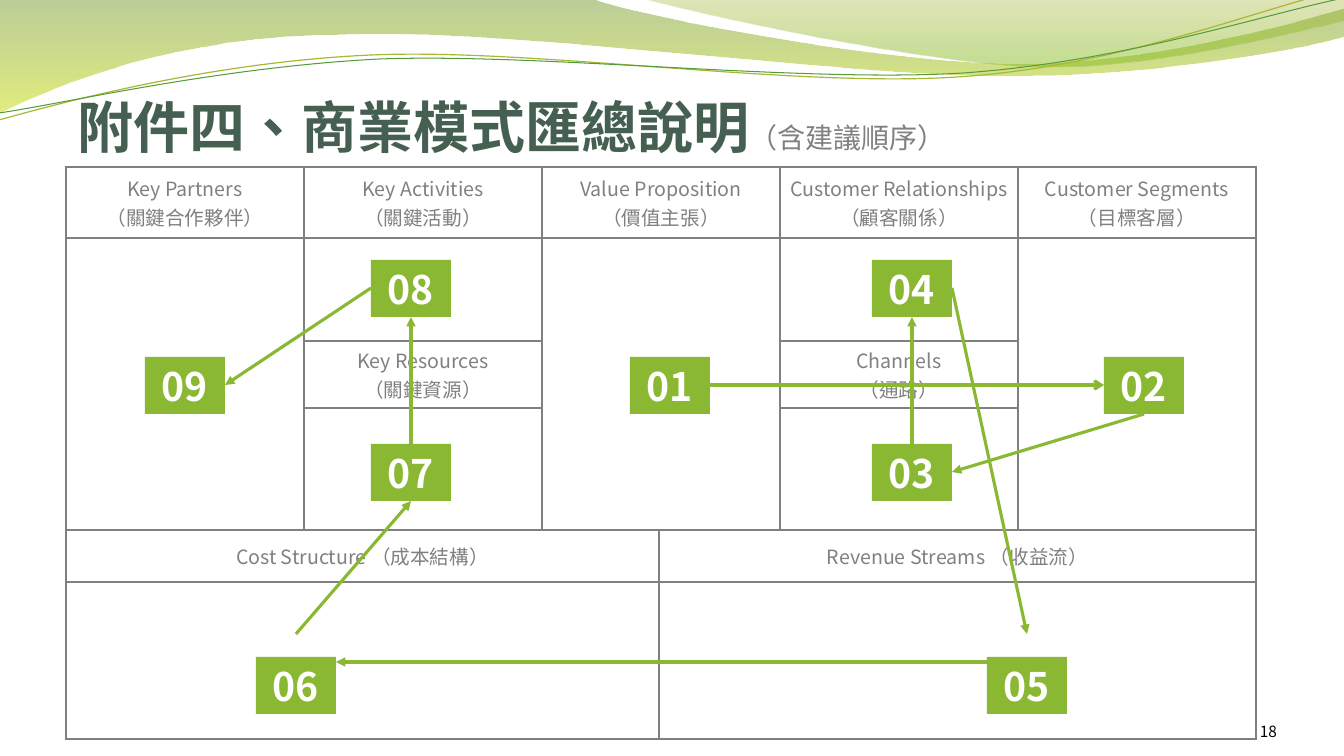
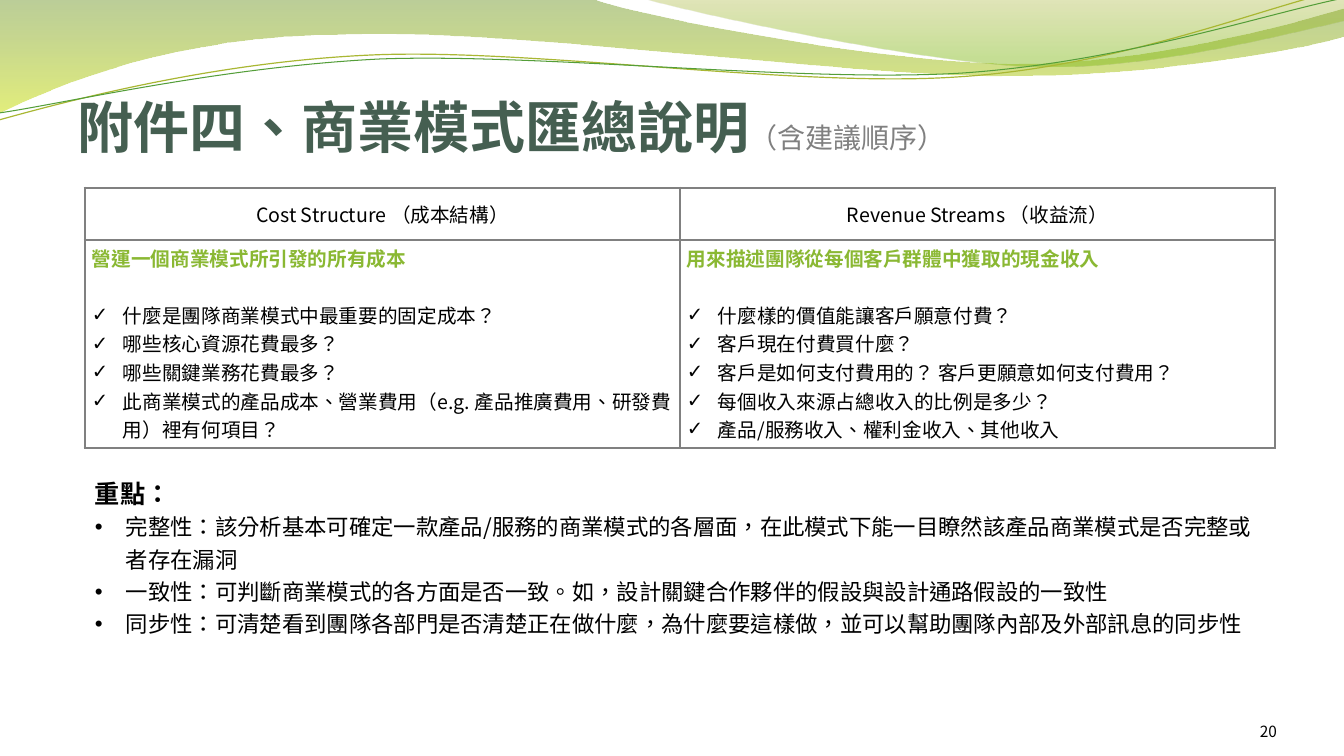
from dataclasses import dataclass, field

from pptx import Presentation
from pptx.dml.color import RGBColor
from pptx.enum.shapes import MSO_CONNECTOR, MSO_SHAPE
from pptx.enum.text import MSO_ANCHOR, MSO_AUTO_SIZE, PP_ALIGN
from pptx.oxml.ns import qn
from pptx.oxml.xmlchemy import OxmlElement
from pptx.util import Emu, Pt

LEFT, CENTER, RIGHT = PP_ALIGN.LEFT, PP_ALIGN.CENTER, PP_ALIGN.RIGHT
TOP, MIDDLE, BOTTOM = MSO_ANCHOR.TOP, MSO_ANCHOR.MIDDLE, MSO_ANCHOR.BOTTOM
RECTANGLE, STRAIGHT = MSO_SHAPE.RECTANGLE, MSO_CONNECTOR.STRAIGHT
NO_FIT = MSO_AUTO_SIZE.NONE

PAGE_W, PAGE_H = 1344, 756
SCALE = 12192000 / PAGE_W

WHITE = RGBColor(0xFF, 0xFF, 0xFF)
BLACK = RGBColor(0x00, 0x00, 0x00)
GRAY = RGBColor(0x80, 0x80, 0x80)
DARK_GREEN = RGBColor(0x45, 0x5F, 0x51)
GREEN = RGBColor(0x8A, 0xB8, 0x33)
OLIVE_LINE = RGBColor(0xA9, 0xB7, 0x33)
GREEN_LINE = RGBColor(0x54, 0x9E, 0x39)

SC, TC = "Noto Sans CJK SC", "Noto Sans CJK TC"

# Text styles: size, colour, bold, font
TITLE = (40, DARK_GREEN, True, SC)
SUBTITLE = (20, GRAY, False, SC)
CANVAS_HEAD = (14, GRAY, False, TC)
BADGE = (28, WHITE, True, SC)
CELL = (14, BLACK, False, TC)
CELL_LEAD = (14, GREEN, True, TC)
POINT_HEAD = (18, BLACK, True, TC)
POINT = (16, BLACK, False, TC)
NUMBER = (11, BLACK, False, TC)

NO_STYLE_TABLE = "{2D5ABB26-0587-4C30-8999-92F81FD0307C}"
OUTER, INNER = Pt(2.25), Pt(1)
HANG = 31

# Wave outlines: two numbers are a line's end, six are a curve's controls and end
WAVES = [
    ([(0, 0), (592, -1), (639, 17, 891, 64, 1019, 64), (1146, 64, 1287, 26, 1344, 9),
      (1345, 37), (1321, 45, 1168, 77, 1002, 76), (836, 76, 513, 29, 346, 35),
      (173, 36, 61, 84, -2, 114)],
     [(0, RGBColor(0x69, 0x92, 0x1C), 45), (1, RGBColor(0xCC, 0xE1, 0x0F), 55)], None),
    ([(643, -1), (684, 11, 916, 62, 1033, 66), (1149, 70, 1292, 32, 1344, 21), (1344, 0)],
     [(0, RGBColor(0x9B, 0xAA, 0x1A), 30), (0.8, RGBColor(0x81, 0xBA, 0x16), 45)], None),
    ([(-1, 120), (64, 102, 212, 62, 372, 55), (531, 48, 795, 88, 957, 77),
      (1119, 67, 1261, 8, 1341, -10)], None, (OLIVE_LINE, 0.85)),
    ([(-1, 113), (62, 104, 220, 67, 380, 59), (541, 53, 802, 83, 963, 73),
      (1123, 62, 1265, 14, 1344, -2)], None, (GREEN_LINE, 0.75)),
]


@dataclass
class Para:
    spans: list
    formats: dict = field(default_factory=dict)
    bullet: str = ""


def px(length):
    return Emu(round(length * SCALE))


def place(box):
    return [px(length) for length in box]


def set_formats(target, formats):
    for name, value in formats.items():
        setattr(target, name, value)


def add_xml(parent, tag, **attributes):
    child = OxmlElement(tag)
    for name, value in attributes.items():
        child.set(name, str(value))
    parent.append(child)
    return child


def margins(left, top, right, bottom):
    return {"margin_left": px(left), "margin_top": px(top),
            "margin_right": px(right), "margin_bottom": px(bottom)}


def write_text(frame, paras):
    for index, item in enumerate(paras):
        para = frame.add_paragraph() if index else frame.paragraphs[0]
        set_formats(para, item.formats)
        if item.bullet:
            props = para._p.get_or_add_pPr()
            props.set("marL", str(px(HANG)))
            props.set("indent", str(-px(HANG)))
            add_xml(props, "a:buFont", typeface="Arial")
            add_xml(props, "a:buChar", char=item.bullet)
        for text, (size, color, bold, name) in item.spans:
            span = para.add_run()
            span.text = text
            set_formats(span.font, {"size": Pt(size), "bold": bold, "name": name})
            span.font.color.rgb = color
            props = span._r.get_or_add_rPr()
            props.set("lang", "zh-TW")
            add_xml(props, "a:ea", typeface=name)


def centered(*lines, style):
    return [Para([(line, style)], {"alignment": CENTER}) for line in lines]


# Shared page parts
def build_outline(page, steps, closed):
    """Lay every point as a line, then join each curve's three into one Bezier."""
    points = [(px(x), px(y)) for step in steps for x, y in zip(step[::2], step[1::2])]
    builder = page.shapes.build_freeform(*points[0], scale=1.0)
    builder.add_line_segments(points[1:], close=closed)
    outline = builder.convert_to_shape()
    lines = iter(list(outline._element.iter(qn("a:lnTo"))))
    for step in steps[1:]:
        first = next(lines)
        if len(step) == 6:
            curve = OxmlElement("a:cubicBezTo")
            first.addprevious(curve)
            for line in (first, next(lines), next(lines)):
                curve.append(line[0])
                line.getparent().remove(line)
    return outline


def add_waves(page, layout):
    """Draw the waves and hand them to the layout behind every page."""
    tree = layout.shapes._spTree
    for position, (steps, stops, line) in enumerate(WAVES):
        wave = build_outline(page, steps, bool(stops))
        wave.shadow.inherit = False
        if stops:
            wave.line.fill.background()
            wave.fill.gradient()
            wave.fill.gradient_angle = 270
            for stop, (offset, color, _) in zip(wave.fill.gradient_stops, stops):
                stop.position = offset
                stop.color.rgb = color
            colors = wave._element.spPr.iter(qn("a:srgbClr"))
            for color, (_, _, opacity) in zip(list(colors), stops):
                add_xml(color, "a:alpha", val=opacity * 1000)
        else:
            wave.fill.background()
            wave.line.color.rgb = line[0]
            wave.line.width = Pt(line[1])
        tree.insert(2 + position, wave._element)
    for number, props in enumerate(tree.iter(qn("p:cNvPr")), 1):
        props.set("id", str(number))


def add_textbox(page, box, paras, formats):
    textbox = page.shapes.add_textbox(*place(box))
    set_formats(textbox.text_frame, {"word_wrap": True, **formats})
    write_text(textbox.text_frame, paras)


def add_page(deck, layout, number):
    page = deck.slides.add_slide(layout)
    title = page.shapes.title
    set_formats(title, dict(zip(("left", "top", "width", "height"), place((78, 73, 1210, 87)))))
    set_formats(title.text_frame, {"vertical_anchor": BOTTOM, "auto_size": NO_FIT,
                                   "word_wrap": True, **margins(0, 5, 0, 0)})
    write_text(title.text_frame, [Para(
        [("附件四、商業模式匯總說明", TITLE), ("（含建議順序）", SUBTITLE)], {"alignment": LEFT})])
    add_textbox(page, (1165, 701, 112, 40),
                [Para([(number, NUMBER)], {"alignment": RIGHT})],
                {"vertical_anchor": BOTTOM, **margins(0, 0, 0, 0)})
    return page


# Tables
def add_border(cell, tag, width):
    line = add_xml(cell._tc.get_or_add_tcPr(), tag,
                   w=int(width), cap="flat", cmpd="sng", algn="ctr")
    add_xml(add_xml(line, "a:solidFill"), "a:srgbClr", val=GRAY)
    add_xml(line, "a:prstDash", val="solid")


def add_grid(page, left, top, columns, rows, blocks):
    """Blocks are (row, column, row span, column span, anchor, paragraphs)."""
    box = place((left, top, sum(columns), sum(rows)))
    table = page.shapes.add_table(len(rows), len(columns), *box).table
    set_formats(table, {"first_row": False, "horz_banding": False})
    table._tbl.tblPr.find(qn("a:tableStyleId")).text = NO_STYLE_TABLE
    for column, width in zip(table.columns, columns):
        column.width = px(width)
    for row, height in zip(table.rows, rows):
        row.height = px(height)
    for row, column, tall, wide, anchor, paras in blocks:
        origin = table.cell(row, column)
        last_row, last_column = row + tall - 1, column + wide - 1
        if tall * wide > 1:
            origin.merge(table.cell(last_row, last_column))
        # Only the rim of a merged block has borders, heavy on the table's edge
        for r in range(row, row + tall):
            for c in range(column, column + wide):
                cell = table.cell(r, c)
                rims = (("a:lnL", c == column, column == 0),
                        ("a:lnR", c == last_column, last_column == len(columns) - 1),
                        ("a:lnT", r == row, row == 0),
                        ("a:lnB", r == last_row, last_row == len(rows) - 1))
                for tag, on_rim, on_edge in rims:
                    if on_rim or (r, c) == (row, column):
                        add_border(cell, tag, OUTER if on_edge else INNER)
                cell.fill.background()
        set_formats(origin, {"vertical_anchor": anchor, **margins(7, 4, 7, 4)})
        write_text(origin.text_frame, paras)


# Canvas page
def add_canvas(page, left, top):
    heads = [
        (0, 0, 1, 1, ("Key Partners", "（關鍵合作夥伴）")),
        (0, 1, 1, 1, ("Key Activities", "（關鍵活動）")),
        (0, 2, 1, 2, ("Value Proposition", "（價值主張）")),
        (0, 4, 1, 1, ("Customer Relationships", "（顧客關係）")),
        (0, 5, 1, 1, ("Customer Segments", "（目標客層）")),
        (2, 1, 1, 1, ("Key Resources", "（關鍵資源）")),
        (2, 4, 1, 1, ("Channels", "（通路）")),
        (4, 0, 1, 3, ("Cost Structure （成本結構）",)),
        (4, 3, 1, 3, ("Revenue Streams （收益流）",)),
    ]
    empty = [(1, 0, 3, 1), (1, 1, 1, 1), (1, 2, 3, 2), (1, 4, 1, 1), (1, 5, 3, 1),
             (3, 1, 1, 1), (3, 4, 1, 1), (5, 0, 1, 3), (5, 3, 1, 3)]
    blocks = [(*spot, MIDDLE, centered(*lines, style=CANVAS_HEAD)) for *spot, lines in heads]
    blocks += [(*spot, TOP, []) for spot in empty]
    add_grid(page, left, top, [238, 238, 117, 121, 238, 238],
             [71, 103, 67, 122, 52, 157], blocks)


def add_order(page, left, top):
    """Numbered badges and the arrows that join them."""
    width, height, lift = 80, 57, 23
    badges = {"01": (564, 190), "02": (1038, 190), "03": (806, 277),
              "04": (806, 93), "05": (921, 490), "06": (190, 490),
              "07": (305, 277), "08": (305, 93), "09": (79, 190)}
    sides = {"left": (0, height // 2), "right": (width, height // 2),
             "top": (width // 2, 0), "bottom": (width // 2, height)}
    arrows = [("01", "right", "02", "left"), ("02", "bottom", "03", "right"),
              ("03", "top", "04", "bottom"), ("04", "right", "05", "top"),
              ("05", "left", "06", "right"), ("06", "top", "07", "bottom"),
              ("07", "top", "08", "bottom"), ("08", "left", "09", "right")]

    def joint(label, side):
        x, y = badges[label]
        raised = lift if label in ("05", "06") else 0
        return px(left + x + sides[side][0]), px(top + y + sides[side][1] - raised)

    for label, (x, y) in badges.items():
        badge = page.shapes.add_shape(RECTANGLE, *place((left + x, top + y, width, height)))
        badge.shadow.inherit = False
        badge.fill.solid()
        badge.fill.fore_color.rgb = GREEN
        badge.line.fill.background()
        set_formats(badge.text_frame, {"vertical_anchor": MIDDLE, **margins(0, 0, 0, 0)})
        write_text(badge.text_frame, centered(label, style=BADGE))
    for index, (start, start_side, end, end_side) in enumerate(arrows):
        arrow = page.shapes.add_connector(
            STRAIGHT, *joint(start, start_side), *joint(end, end_side))
        arrow.line.color.rgb = GREEN
        arrow.line.width = Pt(2.25)
        add_xml(arrow.line._get_or_add_ln(), "a:tailEnd", type="triangle" if index else "arrow")
        add_xml(arrow._element.spPr, "a:effectLst")


# Questions page
def add_questions(page, left, top):
    topics = [
        ("Cost Structure （成本結構）", "營運一個商業模式所引發的所有成本",
         ["什麼是團隊商業模式中最重要的固定成本？", "哪些核心資源花費最多？", "哪些關鍵業務花費最多？",
          "此商業模式的產品成本、營業費用（e.g. 產品推廣費用、研發費用）裡有何項目？"]),
        ("Revenue Streams （收益流）", "用來描述團隊從每個客戶群體中獲取的現金收入",
         ["什麼樣的價值能讓客戶願意付費？", "客戶現在付費買什麼？",
          "客戶是如何支付費用的？ 客戶更願意如何支付費用？", "每個收入來源占總收入的比例是多少？",
          "產品/服務收入、權利金收入、其他收入"]),
    ]
    blocks = []
    for column, (head, lead, questions) in enumerate(topics):
        paras = [Para([(lead, CELL_LEAD)], {"space_after": Pt(20)})]
        paras += [Para([(question, CELL)], bullet="✓") for question in questions]
        blocks.append((0, column, 1, 1, MIDDLE, centered(head, style=CELL)))
        blocks.append((1, column, 1, 1, TOP, paras))
    add_grid(page, left, top, [595, 595], [52, 208], blocks)


def add_key_points(page, box):
    points = [
        "完整性：該分析基本可確定一款產品/服務的商業模式的各層面，在此模式下能一目瞭然該產品商業模式是否完整或者存在漏洞",
        "一致性：可判斷商業模式的各方面是否一致。如，設計關鍵合作夥伴的假設與設計通路假設的一致性",
        "同步性：可清楚看到團隊各部門是否清楚正在做什麼，為什麼要這樣做，並可以幫助團隊內部及外部訊息的同步性",
    ]
    paras = [Para([("重點：", POINT_HEAD)])]
    paras += [Para([(point, POINT)], {"line_spacing": 1.2}, "•") for point in points]
    add_textbox(page, box, paras, margins(10, 5, 10, 5))


def main():
    deck = Presentation()
    set_formats(deck, {"slide_width": px(PAGE_W), "slide_height": px(PAGE_H)})
    layout = deck.slide_layouts.get_by_name("Title Only")

    canvas_page = add_page(deck, layout, "18")
    add_waves(canvas_page, layout)
    add_canvas(canvas_page, 66, 167)
    add_order(canvas_page, 66, 167)

    questions_page = add_page(deck, layout, "20")
    add_questions(questions_page, 85, 188)
    add_key_points(questions_page, (85, 473, 1190, 168))

    deck.save("out.pptx")


if __name__ == "__main__":
    main()
